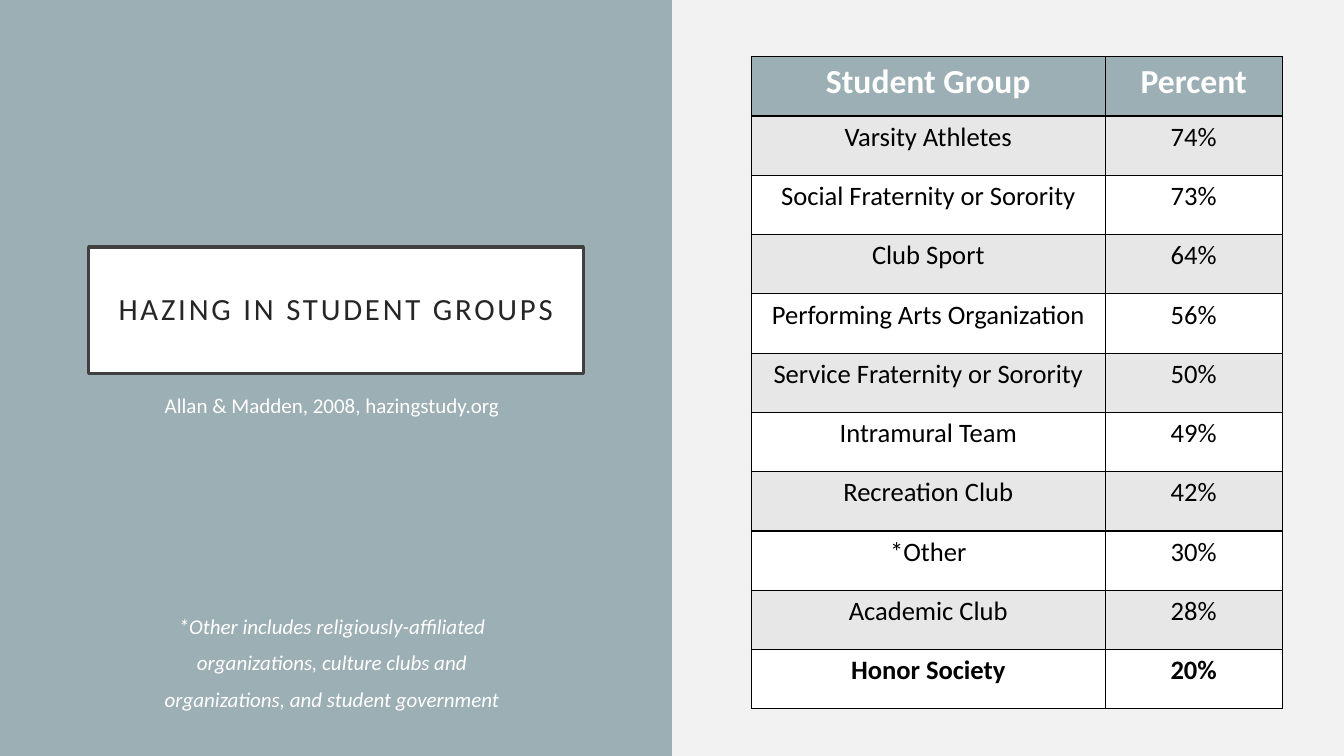
from lxml.etree import SubElement
from pptx import Presentation
from pptx.dml.color import RGBColor
from pptx.enum.shapes import MSO_SHAPE
from pptx.enum.text import MSO_ANCHOR, MSO_AUTO_SIZE, PP_ALIGN
from pptx.oxml.ns import qn
from pptx.util import Inches, Pt

WIDTH, HEIGHT = Inches(13.33), Inches(7.5)
FONT = "Calibri"
COLORS = {
    "background": "F2F2F2", "panel": "9BAFB5", "frame": "404040",
    "title": "262626", "band": "E7E7E7", "white": "FFFFFF", "black": "000000",
}
GROUPS = [
    ("Student Group", "Percent"),
    ("Varsity Athletes", "74%"),
    ("Social Fraternity or Sorority", "73%"),
    ("Club Sport", "64%"),
    ("Performing Arts Organization", "56%"),
    ("Service Fraternity or Sorority", "50%"),
    ("Intramural Team", "49%"),
    ("Recreation Club", "42%"),
    ("*Other", "30%"),
    ("Academic Club", "28%"),
    ("Honor Society", "20%"),
]
CITATION = "Allan & Madden, 2008, hazingstudy.org"
FOOTNOTE = [
    "*Other includes religiously-affiliated",
    "organizations, culture clubs and",
    "organizations, and student government",
]


def rgb(name):
    return RGBColor.from_string(COLORS[name])


def paint(target, name):
    target.fill.solid()
    target.fill.fore_color.rgb = rgb(name)


def style(paragraph, size, color, bold=False, italic=False):
    paragraph.alignment = PP_ALIGN.CENTER
    font = paragraph.font
    font.name, font.size, font.bold, font.italic = FONT, Pt(size), bold, italic
    font.color.rgb = rgb(color)


def place(shape, left, top, width, height):
    shape.left, shape.top = int(left), int(top)
    shape.width, shape.height = int(width), int(height)


def add_title(slide, left, top, width, height):
    title = slide.shapes.title
    place(title, left, top, width, height)
    paint(title, "white")
    title.line.color.rgb = rgb("frame")
    title.line.width = Pt(2.5)
    frame = title.text_frame
    frame.text = "HAZING IN STUDENT GROUPS"
    frame.word_wrap, frame.auto_size = True, MSO_AUTO_SIZE.NONE
    frame.vertical_anchor = MSO_ANCHOR.MIDDLE
    frame.margin_left = frame.margin_right = Inches(0.2)
    frame.margin_top = frame.margin_bottom = Inches(0.2)
    heading = frame.paragraphs[0]
    style(heading, 22, "title")
    heading.line_spacing = 0.9
    heading.runs[0].font._element.set("spc", "200")


def add_notes(slide, left, top, width, height):
    frame = slide.shapes.add_textbox(
        int(left), int(top), int(width), int(height)).text_frame
    frame.word_wrap = True
    frame.text = "\n".join([CITATION, *FOOTNOTE])
    # The wide gap drops the footnote to the foot of the panel
    for index, (line, gap) in enumerate(zip(frame.paragraphs, (0, 141, 10, 10))):
        style(line, 15, "white", italic=index > 0)
        line.line_spacing = 0.9
        line.space_before = Pt(gap)


def add_left_panel(slide, left, top, width, height):
    panel = slide.shapes.add_shape(
        MSO_SHAPE.RECTANGLE, int(left), int(top), int(width), int(height))
    panel.shadow.inherit = False
    paint(panel, "panel")
    panel.line.fill.background()
    slide.shapes.title._element.addprevious(panel._element)  # behind the title

    add_title(slide, left + width * 0.132, top + height * 0.327,
              width * 0.736, height * 0.167)
    add_notes(slide, left + width * 0.183, top + height * 0.517,
              width * 0.622, height * 0.45)


def add_borders(cell):
    properties = cell._tc.get_or_add_tcPr()
    for position, side in enumerate(("lnL", "lnR", "lnT", "lnB")):
        border = properties.makeelement(qn(f"a:{side}"), {"w": str(Pt(1))})
        fill = SubElement(border, qn("a:solidFill"))
        SubElement(fill, qn("a:srgbClr"), val=COLORS["black"])
        properties.insert(position, border)


def add_group_table(slide, left, top, width, height):
    table = slide.shapes.add_table(
        len(GROUPS), 2, int(left), int(top), int(width), int(height)).table
    for column, share in zip(table.columns, (2 / 3, 1 / 3)):
        column.width = int(width * share)
    for row_index, texts in enumerate(GROUPS):
        header, last = row_index == 0, row_index == len(GROUPS) - 1
        fill = "panel" if header else "band" if row_index % 2 else "white"
        table.rows[row_index].height = int(height / len(GROUPS))
        for column_index, text in enumerate(texts):
            cell = table.cell(row_index, column_index)
            cell.text = text
            paint(cell, fill)
            add_borders(cell)
            style(cell.text_frame.paragraphs[0], 24 if header else 19,
                  "white" if header else "black", bold=header or last)


def main():
    deck = Presentation()
    deck.slide_width, deck.slide_height = WIDTH, HEIGHT
    slide = deck.slides.add_slide(deck.slide_layouts.get_by_name("Title Only"))
    paint(slide.background, "background")
    add_left_panel(slide, 0, 0, WIDTH / 2, HEIGHT)
    add_group_table(slide, WIDTH * 0.559, HEIGHT * 0.075,
                    WIDTH * 0.395, HEIGHT * 0.863)
    deck.save("out.pptx")


if __name__ == "__main__":
    main()
